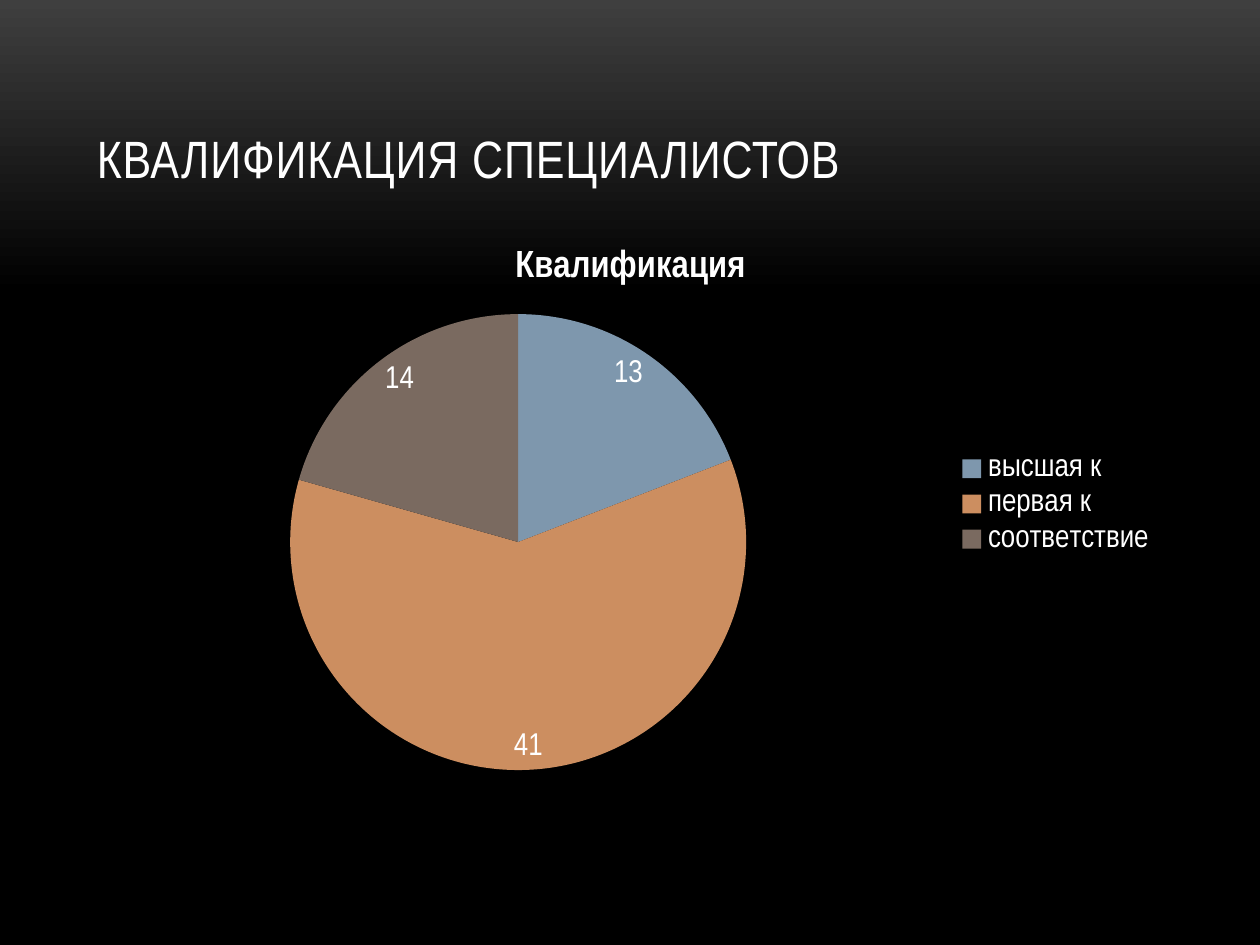
from copy import deepcopy

from pptx import Presentation
from pptx.chart.data import CategoryChartData
from pptx.dml.color import RGBColor
from pptx.enum.chart import XL_CHART_TYPE, XL_LABEL_POSITION, XL_LEGEND_POSITION
from pptx.enum.text import MSO_ANCHOR
from pptx.oxml.ns import qn
from pptx.util import Inches, Pt

FONT = "Arial Narrow"
WHITE = "FFFFFF"
LEFT, WIDTH = 0.67, 8.67
BACKGROUND_STOPS = [(0, "3F3F3F"), (0.31, "000000"), (1, "000000")]
QUALIFICATIONS = [
    ("высшая к", 13, "7E97AD"),
    ("первая к", 41, "CC8E60"),
    ("соответствие ", 14, "7A6A60"),
]


def color(value):
    return RGBColor.from_string(value)


def format_font(font, size, bold=False):
    for name, value in {"name": FONT, "size": Pt(size), "bold": bold}.items():
        setattr(font, name, value)
    font.color.rgb = color(WHITE)


def set_background(slide):
    fill = slide.background.fill
    fill.gradient()
    fill.gradient_angle = 270
    last_stop = list(slide.element.iter(qn("a:gs")))[-1]
    last_stop.addnext(deepcopy(last_stop))
    for stop, (position, value) in zip(fill.gradient_stops, BACKGROUND_STOPS):
        stop.position = position
        stop.color.rgb = color(value)


def add_title(slide, text):
    box = slide.shapes.add_textbox(
        Inches(LEFT), Inches(0.3), Inches(WIDTH), Inches(1.25))
    frame = box.text_frame
    frame.word_wrap = True
    frame.vertical_anchor = MSO_ANCHOR.BOTTOM
    run = frame.paragraphs[0].add_run()
    run.text = text
    format_font(run.font, 30)
    run.font._element.set("spc", "50")


def add_pie(slide, name, rows):
    chart_data = CategoryChartData()
    chart_data.categories = [category for category, _, _ in rows]
    chart_data.add_series(name, [value for _, value, _ in rows])
    chart = slide.shapes.add_chart(
        XL_CHART_TYPE.PIE, Inches(LEFT), Inches(1.75), Inches(WIDTH), Inches(4.5),
        chart_data).chart
    format_font(chart.font, 18)

    chart.has_title = True
    title = chart.chart_title.text_frame
    title.text = name
    format_font(title.paragraphs[0].runs[0].font, 21.6, bold=True)

    chart.has_legend = True
    chart.legend.position = XL_LEGEND_POSITION.RIGHT
    chart.legend.include_in_layout = False
    format_font(chart.legend.font, 18)

    plot = chart.plots[0]
    plot.vary_by_categories = True
    plot.has_data_labels = True
    labels = plot.data_labels
    labels.show_value = True
    labels.position = XL_LABEL_POSITION.INSIDE_END
    format_font(labels.font, 18)
    for index, (_, _, value) in enumerate(rows):
        fill = plot.series[0].points[index].format.fill
        fill.solid()
        fill.fore_color.rgb = color(value)


def main():
    presentation = Presentation()
    presentation.slide_width = Inches(10)
    presentation.slide_height = Inches(7.5)
    slide = presentation.slides.add_slide(presentation.slide_layouts[6])
    set_background(slide)
    add_title(slide, "КВАЛИФИКАЦИЯ СПЕЦИАЛИСТОВ")
    add_pie(slide, "Квалификация", QUALIFICATIONS)
    presentation.save("out.pptx")


if __name__ == "__main__":
    main()
